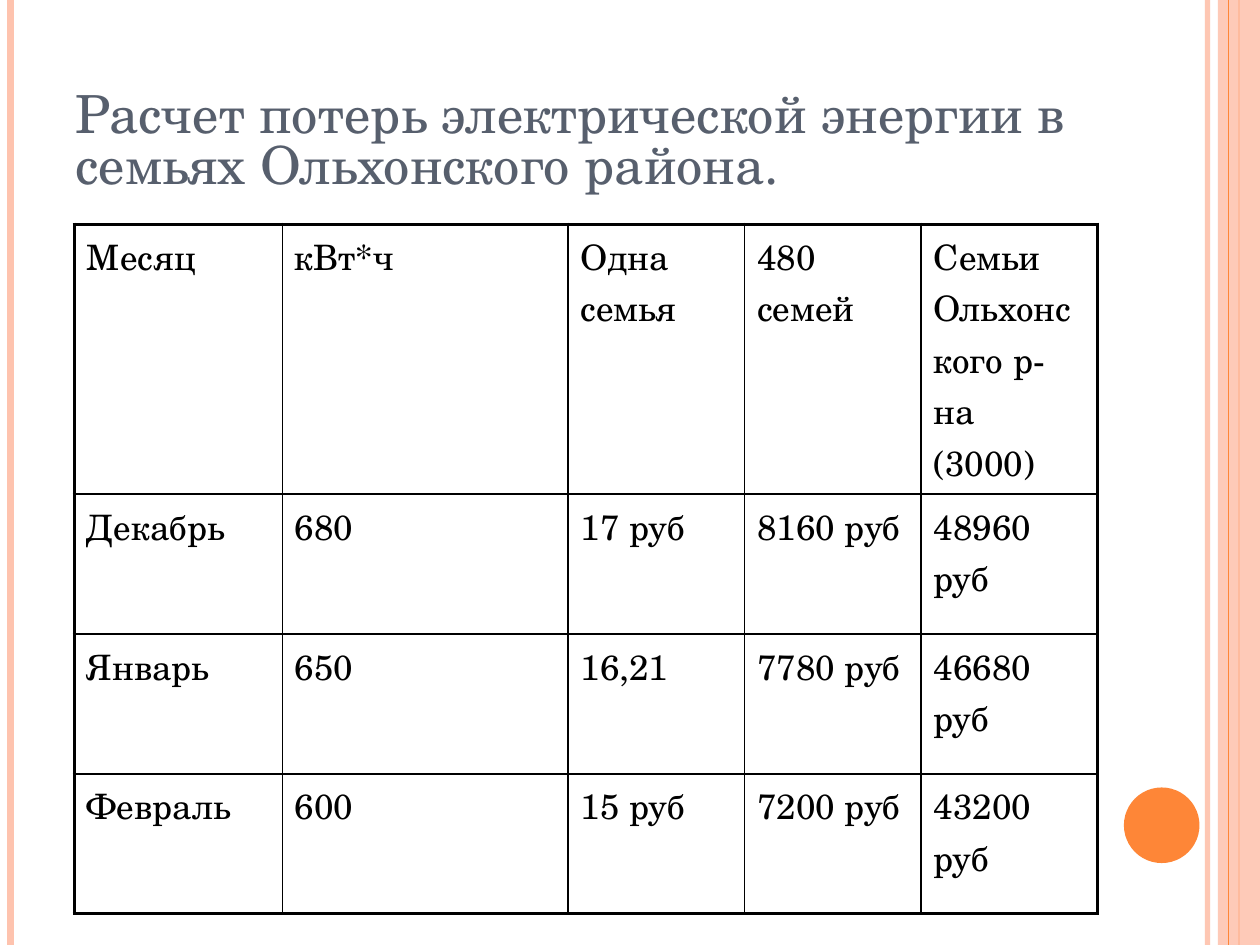
from lxml.etree import SubElement
from pptx import Presentation
from pptx.dml.color import RGBColor
from pptx.enum.shapes import MSO_CONNECTOR, MSO_SHAPE
from pptx.enum.text import MSO_ANCHOR, PP_ALIGN
from pptx.oxml.ns import qn
from pptx.util import Pt

COLORS = {"peach": "FEC3AE", "orange": "FE8637", "title": "575F6D", "black": "000000"}
FONT = "TeX Gyre Schola"
WIDTH, HEIGHT = 720, 540
THIN, THICK = 1, 2.25
COLUMN_WIDTHS = [118.8, 163.44, 100.8, 100.8, 100.8]
ROW_HEIGHTS = [61.92, 79.92, 79.92, 79.92]
LOSSES = [
    ["Месяц", "кВт*ч", "Одна семья", "480 семей", "Семьи Ольхонского р-на (3000)"],
    ["Декабрь", "680", "17 руб", "8160 руб", "48960 руб"],
    ["Январь", "650", "16,21", "7780 руб", "46680 руб"],
    ["Февраль", "600", "15 руб", "7200 руб", "43200 руб"],
]


def color(name):
    """Return the named colour of the palette."""
    return RGBColor.from_string(COLORS[name])


def set_opacity(properties, percent):
    """Make the solid colour found under the properties partly transparent."""
    rgb = next(properties.iter(qn("a:srgbClr")))
    SubElement(rgb, qn("a:alpha"), val=str(percent * 1000))


def add_run(paragraph, text, size, color_name):
    """Add one formatted run to a paragraph."""
    run = paragraph.add_run()
    run.text = text
    run.font.name = FONT
    run.font.size = Pt(size)
    run.font.color.rgb = color(color_name)


def add_stripe(slide, x, width, color_name, opacity=100):
    """Draw a vertical line over the whole height of the slide."""
    stripe = slide.shapes.add_connector(MSO_CONNECTOR.STRAIGHT, Pt(x), Pt(0), Pt(x), Pt(HEIGHT))
    stripe.line.width = Pt(width)
    stripe.line.color.rgb = color(color_name)
    properties = stripe._element.spPr
    if opacity < 100:
        set_opacity(properties, opacity)
    SubElement(properties, qn("a:effectLst"))


def add_filled_shape(slide, preset, box, color_name):
    """Draw a plain shape without outline in the box."""
    shape = slide.shapes.add_shape(preset, *map(Pt, box))
    shape.shadow.inherit = False
    shape.fill.solid()
    shape.fill.fore_color.rgb = color(color_name)
    shape.line.fill.background()
    return shape


def add_decoration(slide, width, height):
    """Draw the edge stripes, the right band and the disc."""
    add_stripe(slide, width - 30, 3, "peach", 93)
    add_stripe(slide, 6, 4.5, "peach")
    add_stripe(slide, width - 12, 1.5, "orange")
    band = add_filled_shape(slide, MSO_SHAPE.RECTANGLE, (width - 24, 0, 24, height), "peach")
    set_opacity(band._element.spPr, 87)
    add_stripe(slide, width - 18, 0.75, "orange")
    add_filled_shape(slide, MSO_SHAPE.OVAL, (642.24, 450, 43.2, 43.2), "orange")


def add_title(slide, left, top, width, height):
    """Fill the title placeholder and move it to the box."""
    title = slide.shapes.title
    title.left, title.top, title.width, title.height = map(Pt, (left, top, width, height))
    frame = title.text_frame
    frame.word_wrap = True
    frame.vertical_anchor = MSO_ANCHOR.BOTTOM
    frame.margin_bottom = Pt(0)
    paragraph = frame.paragraphs[0]
    paragraph.alignment = PP_ALIGN.LEFT
    paragraph.line_spacing = 0.82
    add_run(paragraph, "Расчет потерь электрической энергии в семьях Ольхонского района.", 30, "title")


def set_borders(cell, widths):
    """Draw black cell borders from a dict of side tags and widths."""
    properties = cell._tc.get_or_add_tcPr()
    for side, width in widths.items():
        line = SubElement(properties, qn(f"a:{side}"), w=str(Pt(width)))
        fill = SubElement(line, qn("a:solidFill"))
        SubElement(fill, qn("a:srgbClr"), val=COLORS["black"])


def add_loss_table(slide, left, top, width, height):
    """Add the table of losses with a thick outer frame."""
    last_row, last_column = len(LOSSES) - 1, len(LOSSES[0]) - 1
    table = slide.shapes.add_table(
        last_row + 1, last_column + 1, Pt(left), Pt(top), Pt(width), Pt(height)
    ).table
    table.first_row = table.horz_banding = False
    for column, column_width in zip(table.columns, COLUMN_WIDTHS):
        column.width = Pt(column_width)
    for row, row_height in zip(table.rows, ROW_HEIGHTS):
        row.height = Pt(row_height)
    for i, texts in enumerate(LOSSES):
        for j, text in enumerate(texts):
            cell = table.cell(i, j)
            set_borders(cell, {
                "lnL": THICK if j == 0 else THIN,
                "lnR": THICK if j == last_column else THIN,
                "lnT": THICK if i == 0 else THIN,
                "lnB": THICK if i == last_row else THIN,
            })
            cell.fill.background()
            paragraph = cell.text_frame.paragraphs[0]
            paragraph.space_before = Pt(6)
            add_run(paragraph, text, 20, "black")


def main():
    """Build the slide and save the presentation."""
    presentation = Presentation()
    presentation.slide_width, presentation.slide_height = Pt(WIDTH), Pt(HEIGHT)
    slide = presentation.slides.add_slide(presentation.slide_layouts[5])
    add_decoration(slide, WIDTH, HEIGHT)
    add_title(slide, 36, 21.6, 588, 90)
    add_loss_table(slide, 42.48, 128.16, sum(COLUMN_WIDTHS), sum(ROW_HEIGHTS))
    presentation.save("out.pptx")


if __name__ == "__main__":
    main()
